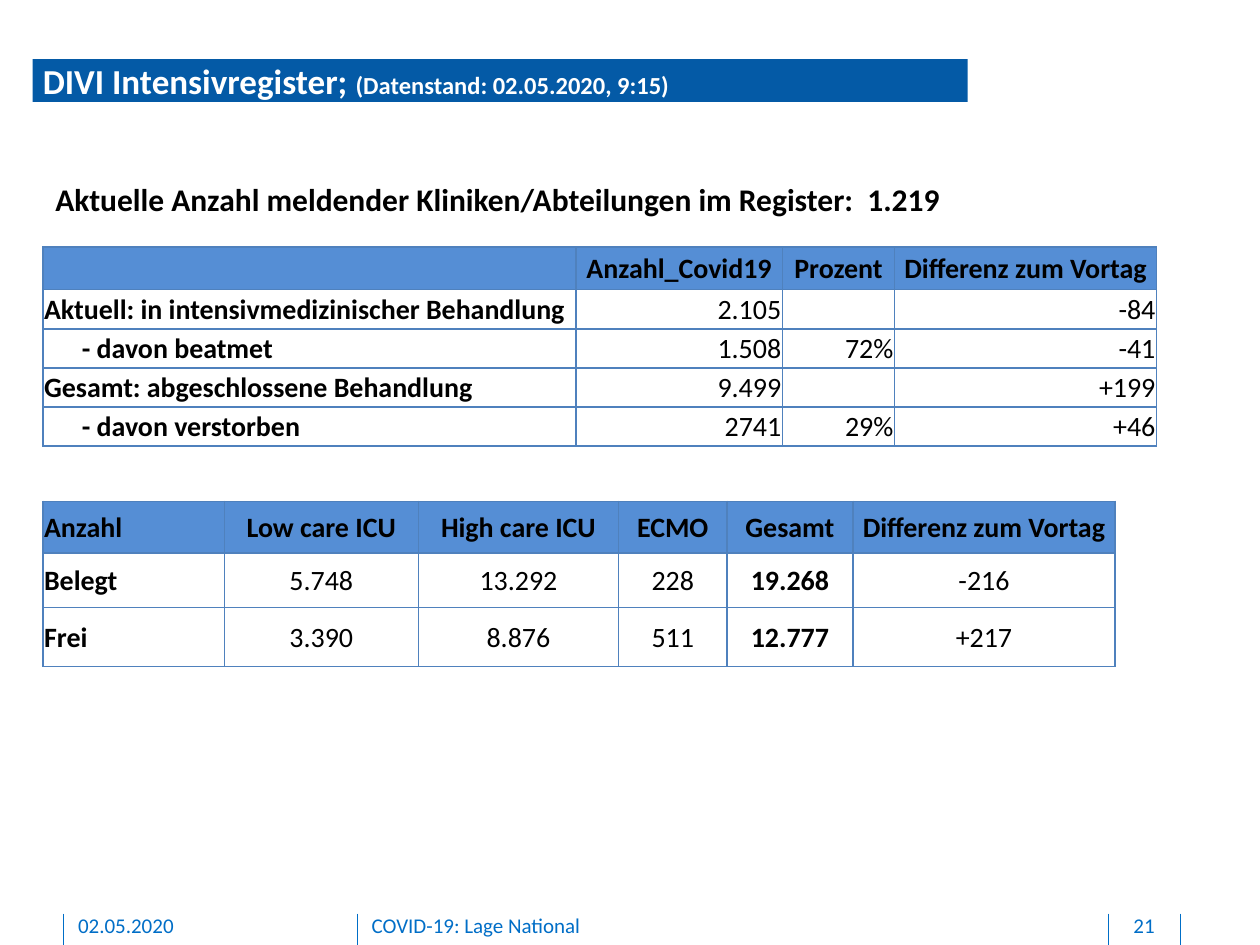
from lxml.etree import SubElement
from pptx import Presentation
from pptx.dml.color import RGBColor
from pptx.enum.shapes import MSO_CONNECTOR as Connector, MSO_SHAPE as Shape
from pptx.enum.text import MSO_ANCHOR as Anchor, PP_ALIGN as Align
from pptx.oxml.ns import qn
from pptx.util import Inches, Pt

FONT = "Calibri"
BLACK, WHITE = "000000", "FFFFFF"
TITLE_BLUE, FOOTER_BLUE = "045AA6", "006EC7"
HEADER_BLUE, BORDER_BLUE = "558ED5", "4F81BD"
INDENT = 0.31

TREATMENT = {
    "columns": [4.23, 1.64, 0.89, 2.08],
    "heights": [0.34, 0.31, 0.31, 0.31, 0.31],
    "rows": [
        ["", "Anzahl_Covid19", "Prozent", "Differenz zum Vortag"],
        ["Aktuell: in intensivmedizinischer Behandlung", "2.105", "", "-84"],
        ["- davon beatmet", "1.508", "72%", "-41"],
        ["Gesamt: abgeschlossene Behandlung", "9.499", "", "+199"],
        ["- davon verstorben", "2741", "29%", "+46"],
    ],
    "body_align": Align.RIGHT,
    "bold_columns": {0},
}
CAPACITY = {
    "columns": [1.44, 1.54, 1.59, 0.86, 1, 2.08],
    "heights": [0.41, 0.43, 0.47],
    "rows": [
        ["Anzahl", "Low care ICU", "High care ICU", "ECMO", "Gesamt", "Differenz zum Vortag"],
        ["Belegt", "5.748", "13.292", "228", "19.268", "-216"],
        ["Frei", "3.390", "8.876", "511", "12.777", "+217"],
    ],
    "body_align": Align.CENTER,
    "bold_columns": {0, 4},
}


def color(value):
    """Turn a hex string into a colour."""
    return RGBColor.from_string(value)


def apply_format(target, values):
    """Set each attribute of the target from a dict."""
    for name, value in values.items():
        setattr(target, name, value)


def add_span(para, text, size, ink, bold=False):
    """Append a formatted run to a paragraph."""
    span = para.add_run()
    span.text = text
    apply_format(span.font, {"name": FONT, "size": Pt(size), "bold": bold})
    span.font.color.rgb = color(ink)


def set_margins(target, left, top, right, bottom):
    """Set the four inner margins of a frame or cell."""
    margins = {"left": left, "top": top, "right": right, "bottom": bottom}
    apply_format(target, {f"margin_{side}": Inches(gap) for side, gap in margins.items()})


def add_label(page, left, top, width, height, text, size, ink, bold=False, align=Align.LEFT):
    """Add a one-line text box and return its frame."""
    box = page.shapes.add_textbox(*map(Inches, (left, top, width, height)))
    box.text_frame.word_wrap = True
    para = box.text_frame.paragraphs[0]
    para.alignment = align
    add_span(para, text, size, ink, bold)
    return box.text_frame


def add_title(page, left, top, width, height):
    """Draw the title bar with its data timestamp."""
    bar = page.shapes.add_shape(Shape.RECTANGLE, *map(Inches, (left, top, width, height)))
    bar.shadow.inherit = False
    bar.fill.solid()
    bar.fill.fore_color.rgb = color(TITLE_BLUE)
    bar.line.fill.background()
    frame = bar.text_frame
    apply_format(frame, {"word_wrap": True, "vertical_anchor": Anchor.MIDDLE})
    set_margins(frame, 0.08, 0, 0, 0)
    para = frame.paragraphs[0]
    para.alignment = Align.LEFT
    add_span(para, "DIVI Intensivregister; ", 20, WHITE, True)
    add_span(para, "(Datenstand: 02.05.2020, 9:15)", 14, WHITE, True)


def add_borders(cell):
    """Give a cell a thin line on all four sides."""
    properties = cell._tc.get_or_add_tcPr()
    for side in "LRTB":
        line = SubElement(properties, qn(f"a:ln{side}"), w=str(Pt(1)))
        fill = SubElement(line, qn("a:solidFill"))
        SubElement(fill, qn("a:srgbClr"), val=BORDER_BLUE)


def fill_cell(cell, text, header, bold, align):
    """Write and format one table cell."""
    add_borders(cell)
    if header:
        cell.fill.solid()
        cell.fill.fore_color.rgb = color(HEADER_BLUE)
    else:
        cell.fill.background()
    cell.vertical_anchor = Anchor.MIDDLE
    set_margins(cell, INDENT if text.startswith("- ") else 0.01, 0.01, 0.01, 0)
    para = cell.text_frame.paragraphs[0]
    para.alignment = align
    if text:
        add_span(para, text, 16, BLACK, bold)
    else:
        SubElement(para._p, qn("a:endParaRPr"), sz="1600")


def add_data_table(page, left, top, data):
    """Build a table whose first row is the header and first column the labels."""
    columns, heights, rows = data["columns"], data["heights"], data["rows"]
    size = map(Inches, (left, top, sum(columns), sum(heights)))
    table = page.shapes.add_table(len(rows), len(columns), *size).table
    apply_format(table, {"first_row": False, "horz_banding": False})
    for column, width in zip(table.columns, columns):
        column.width = Inches(width)
    for row, height in zip(table.rows, heights):
        row.height = Inches(height)
    for i, texts in enumerate(rows):
        for j, text in enumerate(texts):
            header = i == 0
            align = Align.LEFT if j == 0 else Align.CENTER if header else data["body_align"]
            bold = header or j in data["bold_columns"]
            fill_cell(table.cell(i, j), text, header, bold, align)


def add_footer(page, top, bottom):
    """Draw the footer separators, date, subject and page number."""
    for x in (0.5, 2.84, 8.8, 9.37):
        ends = map(Inches, (x, top + 0.01, x, bottom))
        rule = page.shapes.add_connector(Connector.STRAIGHT, *ends)
        rule.line.color.rgb = color(FOOTER_BLUE)
        rule.line.width = Pt(0.5)
        SubElement(rule._element.spPr, qn("a:effectLst"))
    labels = [
        (0.62, 2.03, "02.05.2020", Align.LEFT),
        (2.95, 5.67, "COVID-19: Lage National", Align.LEFT),
        (8.81, 0.54, "21", Align.CENTER),
    ]
    for left, width, text, align in labels:
        frame = add_label(page, left, top, width, 0.21, text, 12, FOOTER_BLUE, align=align)
        set_margins(frame, 0, 0, 0, 0.05)


def main():
    """Build the register slide and save the deck."""
    deck = Presentation()
    apply_format(deck, {"slide_width": Inches(10), "slide_height": Inches(7.5)})
    page = deck.slides.add_slide(deck.slide_layouts[6])
    add_footer(page, 7.24, 7.5)
    add_title(page, 0.26, 0.47, 7.42, 0.34)
    heading = "Aktuelle Anzahl meldender Kliniken/Abteilungen im Register:  1.219"
    add_label(page, 0.34, 1.38, 7.42, 0.4, heading, 18, BLACK, True)
    add_data_table(page, 0.34, 1.96, TREATMENT)
    add_data_table(page, 0.34, 3.98, CAPACITY)
    deck.save("out.pptx")


if __name__ == "__main__":
    main()
